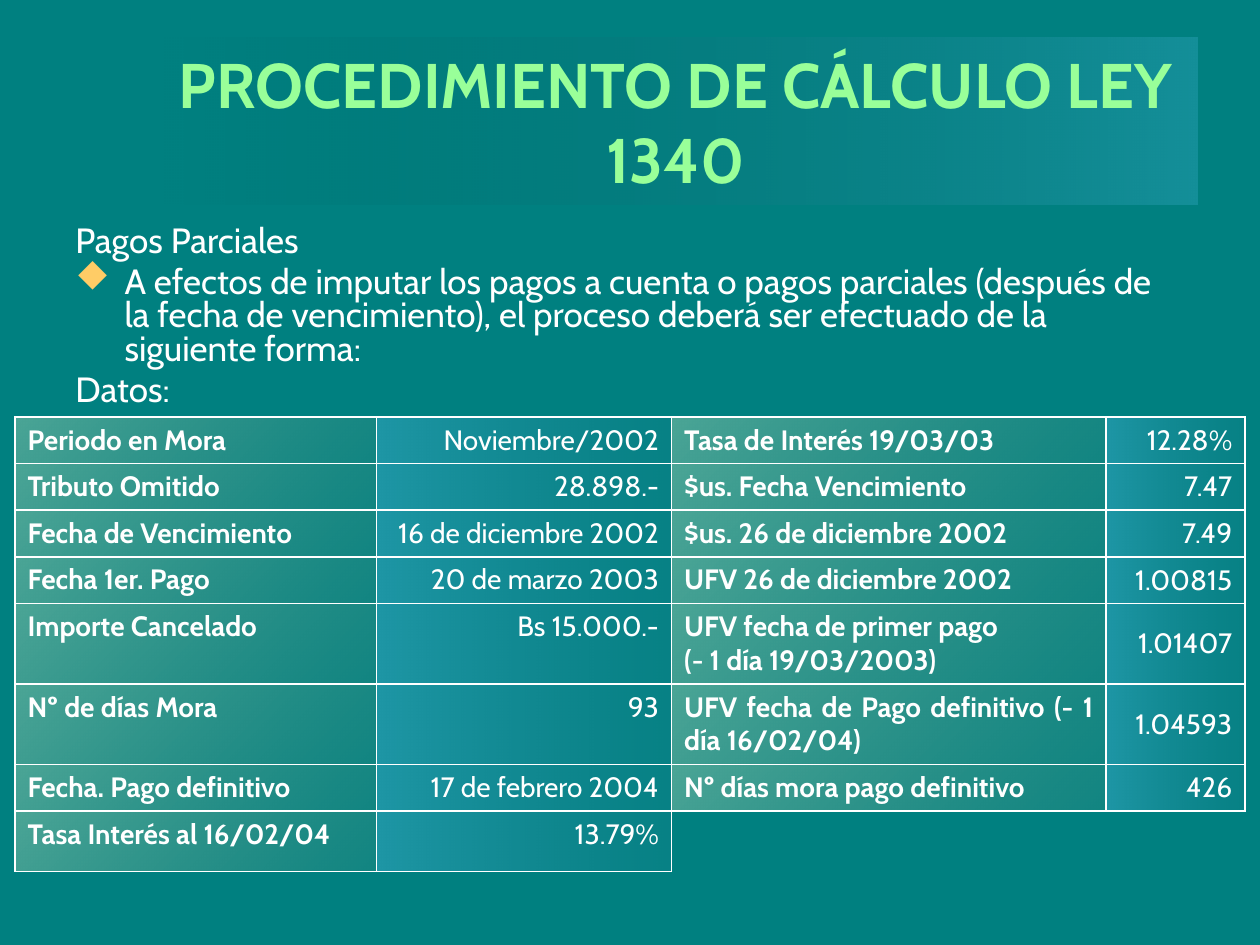
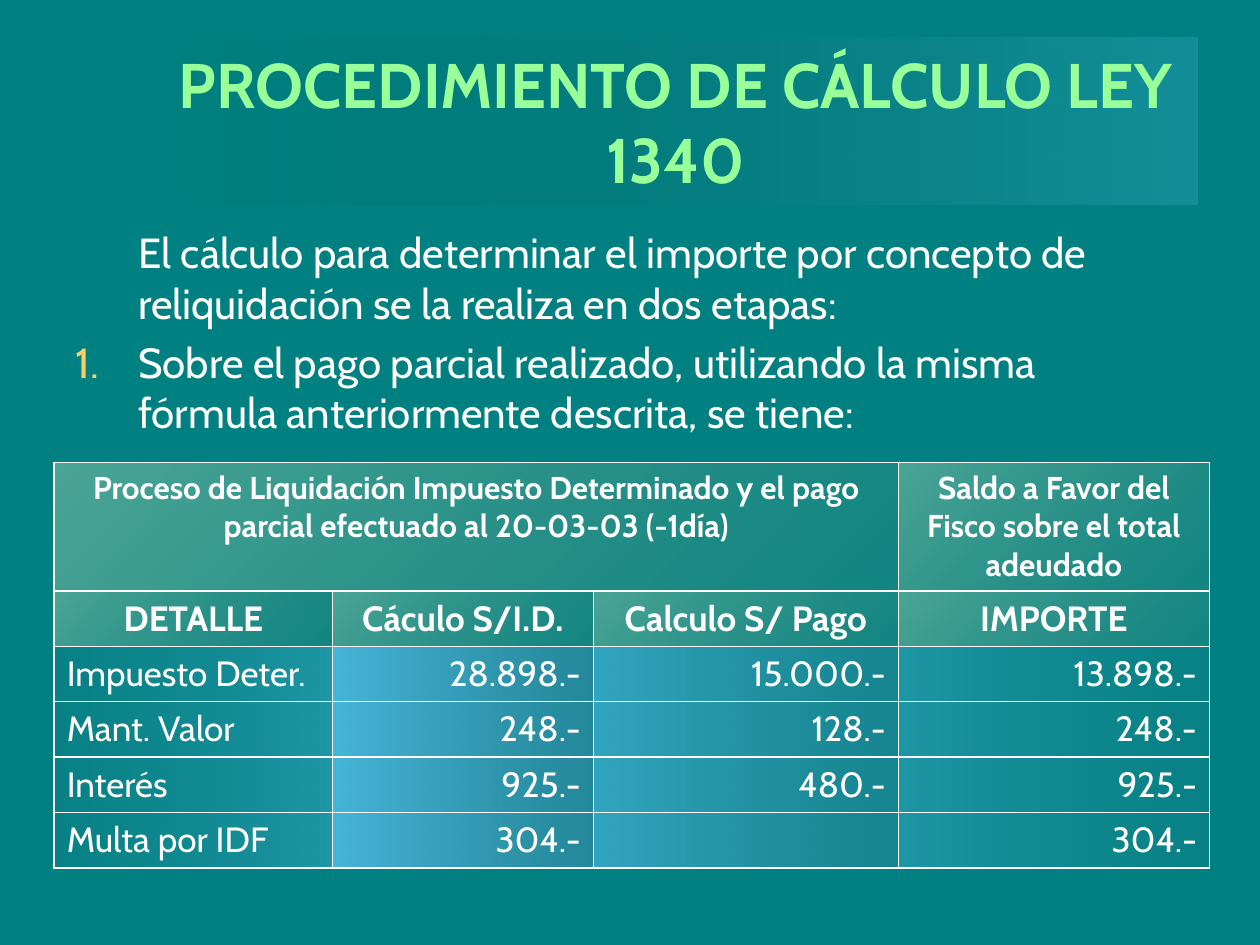
from dataclasses import dataclass
from typing import Optional

from lxml import etree
from pptx import Presentation
from pptx import util as u
from pptx.dml.color import RGBColor
from pptx.enum import shapes, text
from pptx.oxml.ns import qn

# Slide grid: square cells, lengths below are columns and rows
WIDTH, HEIGHT = u.Inches(10), u.Inches(7.5)
COLUMNS = 100
CELL = WIDTH / COLUMNS

FONT = "Cabin"
SYMBOL_FONT = "Wingdings"
DIAMOND = "u"  # the diamond's place in the symbol font
TEAL = RGBColor(0x00, 0x80, 0x80)
WHITE = RGBColor(0xFF, 0xFF, 0xFF)
BLACK = RGBColor(0x00, 0x00, 0x00)
LIME = RGBColor(0x99, 0xFF, 0x99)
AMBER = RGBColor(0xFF, 0xCC, 0x66)
SKY = RGBColor(0x66, 0xCC, 0xFF)
STEEL = RGBColor(0x49, 0x92, 0xB6)
CREAM = RGBColor(0xFF, 0xFF, 0xCC)
OLIVE = RGBColor(0xB6, 0xB6, 0x92)

TITLE = "PROCEDIMIENTO DE CÁLCULO LEY 1340"
PLAIN_TABLE = "{2D5ABB26-0587-4C30-8999-92F81FD0307C}"
LEFT, CENTER, RIGHT, JUSTIFY = (text.PP_ALIGN.LEFT, text.PP_ALIGN.CENTER,
                                text.PP_ALIGN.RIGHT, text.PP_ALIGN.JUSTIFY)
TOP, MIDDLE = text.MSO_ANCHOR.TOP, text.MSO_ANCHOR.MIDDLE


@dataclass(frozen=True)
class Box:
    left: float
    top: float
    width: float
    height: float

    def emu(self) -> list[int]:
        return [grid(n) for n in (self.left, self.top, self.width, self.height)]


@dataclass(frozen=True)
class Gradient:
    """Two colours, each with its opacity in percent."""
    start: RGBColor
    start_opacity: int
    end: RGBColor
    end_opacity: int
    angle: int = 0


@dataclass(frozen=True)
class CellStyle:
    gradient: Gradient
    align: text.PP_ALIGN
    size: int
    bold: bool = False
    anchor: text.MSO_ANCHOR = MIDDLE


@dataclass(frozen=True)
class Bullet:
    tag: str
    attribute: str
    value: str
    font: str = FONT


@dataclass(frozen=True)
class BodyLine:
    words: str
    margin: float = 0
    bullet: Optional[Bullet] = None


BAND = Gradient(BLACK, 0, SKY, 20)
LABEL = Gradient(CREAM, 30, OLIVE, 10, 45)
VALUE = Gradient(SKY, 30, STEEL, 10)
VALUE_MID = Gradient(SKY, 50, STEEL, 30)
VALUE_STRONG = Gradient(SKY, 70, STEEL, 50)
DETAIL = Gradient(STEEL, 10, SKY, 30)


def grid(cells: float) -> int:
    return round(cells * CELL)


def paint(fill, host, gradient: Gradient) -> None:
    """Fill the host element, which holds no other colours yet."""
    fill.gradient()
    fill.gradient_angle = -gradient.angle % 360
    for stop, color in zip(fill.gradient_stops, (gradient.start, gradient.end)):
        stop.color.rgb = color
    opacities = (gradient.start_opacity, gradient.end_opacity)
    for color, opacity in zip(list(host.iter(qn("a:srgbClr"))), opacities):
        etree.SubElement(color, qn("a:alpha"), val=str(opacity * 1000))


def format_runs(p, size: int, color: RGBColor, bold: bool = False) -> None:
    for r in p.runs:
        r.font.name, r.font.size, r.font.bold = FONT, u.Pt(size), bold
        r.font.color.rgb = color


def add_title(s) -> None:
    sp = s.shapes.add_shape(shapes.MSO_SHAPE.RECTANGLE, *Box(12.2, 3, 82.8, 13.2).emu())
    sp.shadow.inherit = False
    paint(sp.fill, sp.element.spPr, BAND)
    sp.line.fill.background()
    tf = sp.text_frame
    tf.text, tf.word_wrap, tf.vertical_anchor = TITLE, True, MIDDLE
    tf.paragraphs[0].alignment = CENTER
    format_runs(tf.paragraphs[0], 36, LIME, bold=True)


def add_bullet(pPr, bullet: Bullet) -> None:
    color = etree.SubElement(pPr, qn("a:buClr"))
    etree.SubElement(color, qn("a:srgbClr"), val=str(AMBER))
    font = etree.SubElement(pPr, qn("a:buFont"), typeface=bullet.font)
    if bullet.font == SYMBOL_FONT:
        font.set("charset", "2")
    etree.SubElement(pPr, qn(bullet.tag)).set(bullet.attribute, bullet.value)


def add_body(s, box: Box, lines: list[BodyLine], size: int, spacing: float) -> None:
    tf = s.shapes.add_textbox(*box.emu()).text_frame
    tf.word_wrap = True
    for i, line in enumerate(lines):
        p = tf.add_paragraph() if i else tf.paragraphs[0]
        p.text = line.words
        pPr = p._p.get_or_add_pPr()
        pPr.set("marL", str(grid(line.margin)))
        pPr.set("indent", str(-grid(line.margin) if line.bullet else 0))
        if line.bullet:
            add_bullet(pPr, line.bullet)
        p.line_spacing = spacing
        if i:
            p.space_before = u.Pt(round(size * 0.2))
        format_runs(p, size, WHITE)


def add_borders(cell) -> None:
    tcPr = cell._tc.get_or_add_tcPr()
    for i, side in enumerate("LRTB"):
        ln = etree.Element(qn(f"a:ln{side}"), w=str(u.Pt(1)))
        solid = etree.SubElement(ln, qn("a:solidFill"))
        etree.SubElement(solid, qn("a:srgbClr"), val=str(WHITE))
        tcPr.insert(i, ln)


def fill_cell(cell, words: str, style: CellStyle) -> None:
    paint(cell.fill, cell._tc.get_or_add_tcPr(), style.gradient)
    add_borders(cell)
    cell.vertical_anchor = style.anchor
    cell.text = words
    for p in cell.text_frame.paragraphs:
        p.alignment = style.align
        format_runs(p, style.size, WHITE, style.bold)


def add_grid_table(s, left: float, top: float, widths: list[float], heights: list[float]):
    box = Box(left, top, sum(widths), sum(heights))
    table = s.shapes.add_table(len(heights), len(widths), *box.emu()).table
    table.first_row = table.horz_banding = False
    table._tbl.tblPr.find(qn("a:tableStyleId")).text = PLAIN_TABLE
    for column, width in zip(table.columns, widths):
        column.width = grid(width)
    for row, height in zip(table.rows, heights):
        row.height = grid(height)
    return table


# Slide 1: data of the case
BODY_1 = [
    BodyLine("Pagos Parciales"),
    BodyLine("A efectos de imputar los pagos a cuenta o pagos parciales (después de la fecha "
             "de vencimiento), el proceso deberá ser efectuado de la siguiente forma:",
             3.9, Bullet("a:buChar", "char", DIAMOND, SYMBOL_FONT)),
    BodyLine("Datos:"),
]
CASE_DATA = [
    ("Periodo en Mora", "Noviembre/2002", "Tasa de Interés 19/03/03", "12.28%"),
    ("Tributo Omitido", "28.898.-", "$us. Fecha Vencimiento", "7.47"),
    ("Fecha de Vencimiento", "16 de diciembre 2002", "$us. 26 de diciembre 2002", "7.49"),
    ("Fecha 1er. Pago", "20 de marzo 2003", "UFV 26 de diciembre 2002", "1.00815"),
    ("Importe Cancelado", "Bs 15.000.-",
     "UFV fecha de primer pago\n(- 1 día 19/03/2003)", "1.01407"),
    ("Nº de días Mora", "93", "UFV fecha de Pago definitivo (- 1 día 16/02/04)", "1.04593"),
    ("Fecha. Pago definitivo", "17 de febrero 2004", "Nº días mora pago definitivo", "426"),
    ("Tasa Interés al 16/02/04", "13.79%"),
]
CASE_STYLES = [
    CellStyle(LABEL, LEFT, 16, True, TOP),
    CellStyle(VALUE, RIGHT, 16, anchor=TOP),
    CellStyle(LABEL, JUSTIFY, 16, True, TOP),
    CellStyle(VALUE, RIGHT, 16),
]


def build_case_data(s) -> None:
    add_title(s)
    add_body(s, Box(5, 17.5, 90, 16.9), BODY_1, 20, 0.8)
    heights = [3.7] * 4 + [6.4] * 2 + [3.7, 4.8]
    table = add_grid_table(s, 1.2, 33.1, [28.7, 23.4, 34.5, 11], heights)
    for i, row in enumerate(CASE_DATA):
        for j, (words, style) in enumerate(zip(row, CASE_STYLES)):
            fill_cell(table.cell(i, j), words, style)


# Slide 2: settlement of the partial payment
BODY_2 = [
    BodyLine("El cálculo para determinar el importe por concepto de reliquidación "
             "se la realiza en dos etapas:", 5),
    BodyLine("Sobre el pago parcial realizado, utilizando la misma fórmula anteriormente "
             "descrita, se tiene:", 5, Bullet("a:buAutoNum", "type", "arabicPeriod")),
]
GROUPS = ["Proceso de Liquidación Impuesto Determinado y el pago parcial efectuado al "
          "20-03-03 (-1día)", "", "", "Saldo a Favor del Fisco sobre el total adeudado"]
HEADINGS = ["DETALLE", "Cáculo S/I.D.", "Calculo S/ Pago", "IMPORTE"]
AMOUNTS = [
    ("Impuesto Deter.", "28.898.-", "15.000.-", "13.898.-"),
    ("Mant. Valor", "248.-", "128.-", "248.-"),
    ("Interés", "925.-", "480.-", "925.-"),
    ("Multa por IDF", "304.-", "", "304.-"),
]
GROUP_STYLE = CellStyle(LABEL, CENTER, 18, True, TOP)
HEADING_STYLE = CellStyle(LABEL, CENTER, 20, True)
AMOUNT_STYLES = [CellStyle(DETAIL, LEFT, 20)] + [
    CellStyle(gradient, RIGHT, 20) for gradient in (VALUE_STRONG, VALUE_MID, VALUE)]


def build_settlement(s) -> None:
    add_title(s)
    add_body(s, Box(5, 17.5, 88, 18.4), BODY_2, 24, 1)
    heights = [10.2] + [4.4] * 5
    table = add_grid_table(s, 4.3, 36.7, [22.1, 20.7, 24.2, 24.7], heights)
    table.cell(0, 0).merge(table.cell(0, 2))
    rows = [(GROUPS, [GROUP_STYLE] * 4), (HEADINGS, [HEADING_STYLE] * 4)]
    rows += [(amounts, AMOUNT_STYLES) for amounts in AMOUNTS]
    for i, (row, styles) in enumerate(rows):
        for j, (words, style) in enumerate(zip(row, styles)):
            fill_cell(table.cell(i, j), words, style)


def main() -> None:
    prs = Presentation()
    prs.slide_width, prs.slide_height = WIDTH, HEIGHT
    for build in (build_case_data, build_settlement):
        s = prs.slides.add_slide(prs.slide_layouts[6])
        s.background.fill.solid()
        s.background.fill.fore_color.rgb = TEAL
        build(s)
    prs.save("out.pptx")


if __name__ == "__main__":
    main()
